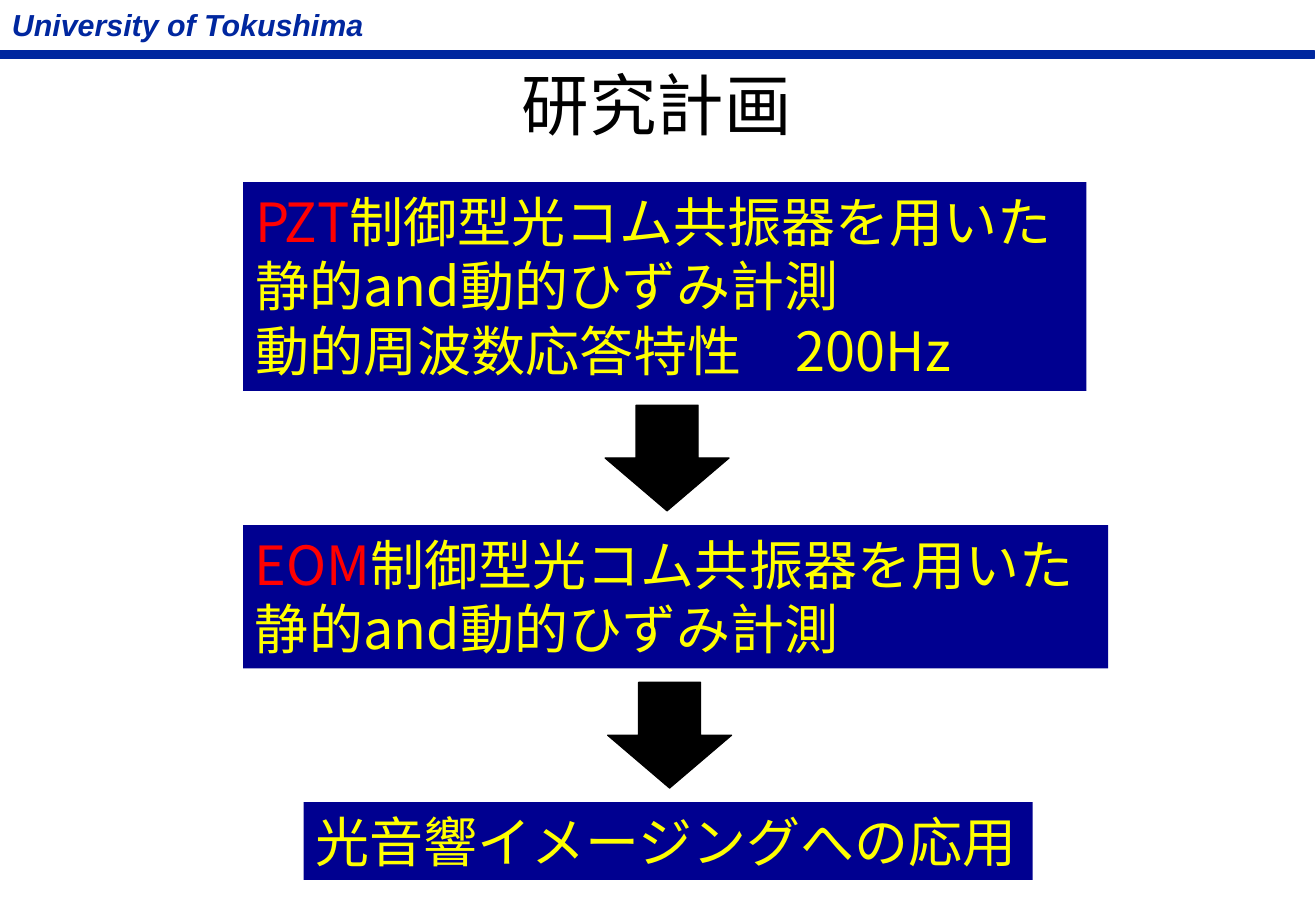
from lxml.etree import SubElement
from pptx import Presentation
from pptx.dml.color import RGBColor
from pptx.enum.shapes import MSO_SHAPE as Shape
from pptx.enum.text import MSO_AUTO_SIZE as AutoSize, PP_ALIGN as Align
from pptx.oxml.ns import qn
from pptx.util import Inches, Pt

WIDTH, HEIGHT = Inches(10.83), Inches(7.5)
COLORS = {"navy": "00279F", "panel": "000090", "key": "FF0000",
          "body": "FFFF00", "ink": "000000"}
JAPANESE = "Noto Sans CJK JP"
GAP = 1.55
ARROW_HEIGHT = 11.6
STEPS = [
    (18.47, 64.08, 22.93, [("PZT", "制御型光コム共振器を用いた"),
                           ("", "静的and動的ひずみ計測"),
                           ("", "動的周波数応答特性　200Hz")]),
    (18.47, 65.74, 15.73, [("EOM", "制御型光コム共振器を用いた"),
                           ("", "静的and動的ひずみ計測")]),
    (23.08, 55.4, 8.53, [("", "光音響イメージングへの応用")]),
]
ARROW_LEFTS = [45.98, 46.17]


def rgb(name):
    """Return the named colour."""
    return RGBColor.from_string(COLORS[name])


def place(left, top, width, height):
    """Turn percentages of the slide into lengths."""
    return (round(WIDTH * left / 100), round(HEIGHT * top / 100),
            round(WIDTH * width / 100), round(HEIGHT * height / 100))


def add_solid(slide, kind, area, color, line_width):
    """Add a shape whose fill and outline share a colour."""
    solid = slide.shapes.add_shape(kind, *place(*area))
    solid.shadow.inherit = False
    solid.fill.solid()
    solid.fill.fore_color.rgb = rgb(color)
    solid.line.color.rgb = rgb(color)
    solid.line.width = Pt(line_width)


def add_text(slide, area, lines, size, color, face=JAPANESE, wrap=False):
    """Add lines of text, each an optional red key term and its wording."""
    box = slide.shapes.add_textbox(*place(*area))
    frame = box.text_frame
    frame.word_wrap = wrap
    frame.auto_size = AutoSize.SHAPE_TO_FIT_TEXT
    for index, (key, wording) in enumerate(lines):
        paragraph = frame.add_paragraph() if index else frame.paragraphs[0]
        if key:
            term = paragraph.add_run()
            term.text = key
            term.font.color.rgb = rgb("key")
        paragraph.add_run().text = wording
        font = paragraph.font
        font.size, font.name = Pt(size), face
        font.color.rgb = rgb(color)
        defaults = paragraph._p.pPr.find(qn("a:defRPr"))
        SubElement(defaults, qn("a:ea")).set("typeface", face)
    return box


def add_header(slide):
    """Add the university name, the rule below it and the title."""
    add_solid(slide, Shape.RECTANGLE, (0, 5.6, 99.9, 0.8), "navy", 1)
    university = add_text(slide, (0, 0, 29.36, 5.33),
                          [("", "University of Tokushima")], 18, "navy", "Arial")
    name_font = university.text_frame.paragraphs[0].font
    name_font.bold = name_font.italic = True
    title = add_text(slide, (-0.18, 6.27, 100.18, 10.27),
                     [("", "研究計画")], 40, "ink", wrap=True)
    title.text_frame.paragraphs[0].alignment = Align.CENTER


def add_plan(slide):
    """Stack the research steps with an arrow between neighbours."""
    top = 20
    for index, (left, width, height, lines) in enumerate(STEPS):
        step = add_text(slide, (left, top, width, height), lines, 32, "body")
        step.fill.solid()
        step.fill.fore_color.rgb = rgb("panel")
        top += height + GAP
        if index < len(ARROW_LEFTS):
            area = (ARROW_LEFTS[index], top, 9.42, ARROW_HEIGHT)
            add_solid(slide, Shape.DOWN_ARROW, area, "ink", 0.75)
            top += ARROW_HEIGHT + GAP


def main():
    """Build and save the slide."""
    deck = Presentation()
    deck.slide_width, deck.slide_height = WIDTH, HEIGHT
    slide = deck.slides.add_slide(deck.slide_layouts[6])
    add_header(slide)
    add_plan(slide)
    deck.save("out.pptx")


if __name__ == "__main__":
    main()
